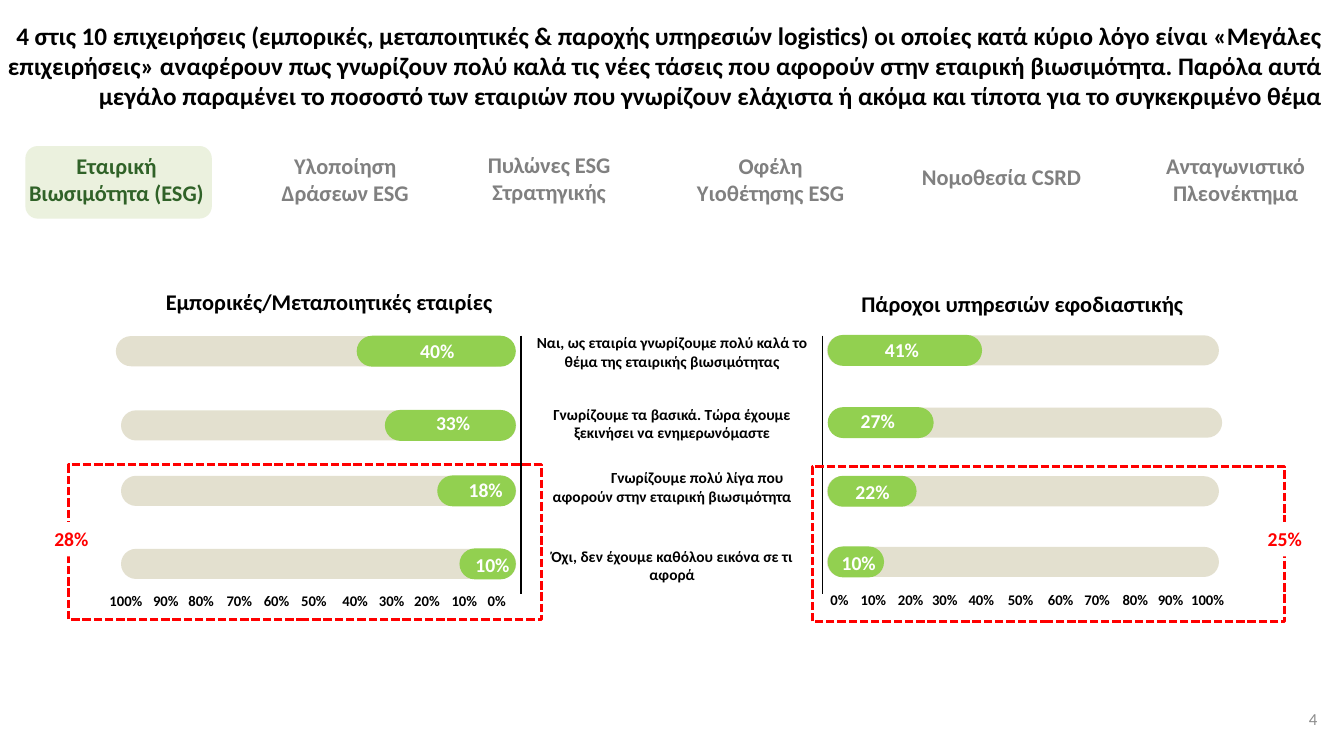
from lxml.etree import SubElement
from pptx import Presentation
from pptx.dml.color import RGBColor as RGB
from pptx.enum.dml import MSO_LINE as Dash
from pptx.enum.shapes import MSO_CONNECTOR as Link, MSO_SHAPE as Kind
from pptx.enum.text import MSO_ANCHOR as Anchor, PP_ALIGN as Align
from pptx.oxml.ns import qn
from pptx.util import Cm, Pt

BLACK = RGB(0, 0, 0)
WHITE = RGB(255, 255, 255)
RED = RGB(255, 0, 0)
GREY = RGB(0x80, 0x80, 0x80)
PALE = RGB(0x8C, 0x8C, 0x8C)
SAND = RGB(0xDD, 0xD9, 0xC3)
LIME = RGB(0x92, 0xD0, 0x50)
MINT = RGB(0xEB, 0xF1, 0xDE)
GREEN = RGB(0x30, 0x62, 0x28)

TITLE = (
    "4 στις 10 επιχειρήσεις (εμπορικές, μεταποιητικές & παροχής υπηρεσιών logistics) "
    "οι οποίες κατά κύριο λόγο είναι «Μεγάλες επιχειρήσεις» αναφέρουν πως γνωρίζουν "
    "πολύ καλά τις νέες τάσεις που αφορούν στην εταιρική βιωσιμότητα. Παρόλα αυτά "
    "μεγάλο παραμένει το ποσοστό των εταιριών που γνωρίζουν ελάχιστα ή ακόμα και "
    "τίποτα για το συγκεκριμένο θέμα"
)
TABS = [
    ("Εταιρική Βιωσιμότητα (ESG)", 0.33, 3.71, 5.21, GREEN),
    ("Υλοποίηση Δράσεων ESG", 6.35, 3.71, 4.7, GREY),
    ("Πυλώνες ESG Στρατηγικής", 10.92, 3.68, 5.84, GREY),
    ("Οφέλη Υιοθέτησης ESG", 17.07, 3.71, 4.7, GREY),
    ("Νομοθεσία CSRD", 22.89, 3.99, 4.7, GREY),
    ("Ανταγωνιστικό Πλεονέκτημα", 28.42, 3.71, 5.44, GREY),
]
HEADS = [
    ("Εμπορικές/Μεταποιητικές εταιρίες", 3.61, 7.14, 9.37),
    ("Πάροχοι υπηρεσιών εφοδιαστικής", 20.8, 7.19, 9.93),
]
REPLIES = [
    ("Ναι, ως εταιρία γνωρίζουμε πολύ καλά το θέμα της εταιρικής βιωσιμότητας", 8.31),
    ("Γνωρίζουμε τα βασικά. Τώρα έχουμε ξεκινήσει να ενημερωνόμαστε", 10.11),
    ("\tΓνωρίζουμε πολύ λίγα που αφορούν στην εταιρική βιωσιμότητα", 11.71),
    ("Όχι, δεν έχουμε καθόλου εικόνα σε τι αφορά", 13.69),
]
TRADE = [
    (40, 2.92, 8.85, 4.01, 10.34, 8.41),
    (33, 3.05, 10.72, 3.3, 10.74, 10.24),
    (18, 3.05, 12.37, 1.98, 11.56, 11.91),
    (10, 3.05, 14.21, 1.42, 11.73, 13.82),
]
LOGIS = [
    (41, 20.84, 8.83, 3.89, 22.05, 8.38),
    (27, 20.92, 10.65, 2.67, 21.44, 10.19),
    (22, 20.84, 12.38, 2.24, 21.31, 11.96),
    (10, 20.84, 14.16, 1.42, 20.96, 13.77),
]
TICKS = [
    (14.81, [12.04, 11.13, 10.19, 9.3, 8.38, 7.34, 6.4, 5.46, 4.5, 3.61, 2.51]),
    (14.79, [20.68, 21.44, 22.38, 23.24, 24.16, 25.15, 26.16, 27.08, 28.04, 28.93, 29.77]),
]
GROUPS = [("28%", 1.73, 11.71, 1.04), ("25%", 20.47, 11.76, 31.62)]


class Board:
    font = "Calibri"

    def __init__(self, deck):
        self.slide = deck.slides.add_slide(deck.slide_layouts[5])
        self.shapes = self.slide.shapes

    def label(self, shape, text, size, color, align, bold=True, space=None):
        frame = shape.text_frame
        frame.text = text
        frame.word_wrap = True
        for para in frame.paragraphs:
            para.alignment = align
            if space:
                para.line_spacing = space
            for run in para.runs:
                font = run.font
                font.name, font.size, font.bold = self.font, Pt(size), bold
                font.color.rgb = color
        return frame

    def title(self, text, x, y, w, h):
        shape = self.shapes.title
        shape.left, shape.top, shape.width, shape.height = Cm(x), Cm(y), Cm(w), Cm(h)
        frame = self.label(shape, text, 18, BLACK, Align.RIGHT)
        frame.vertical_anchor = Anchor.TOP

    def text(self, text, x, y, w, h, size, color=BLACK, align=Align.CENTER,
             anchor=Anchor.TOP, fill=None, **style):
        box = self.shapes.add_textbox(Cm(x), Cm(y), Cm(w), Cm(h))
        self.label(box, text, size, color, align, **style).vertical_anchor = anchor
        if fill is not None:
            box.fill.solid()
            box.fill.fore_color.rgb = fill

    def shape(self, kind, x, y, w, h):
        shape = self.shapes.add_shape(kind, Cm(x), Cm(y), Cm(w), Cm(h))
        shape.shadow.inherit = False
        return shape

    def pill(self, x, y, w, h, color, curve=0.5, alpha=None):
        pill = self.shape(Kind.ROUNDED_RECTANGLE, x, y, w, h)
        pill.adjustments[0] = curve
        pill.fill.solid()
        pill.fill.fore_color.rgb = color
        pill.line.fill.background()
        if alpha:
            tint = next(pill._element.iter(qn("a:srgbClr")))
            SubElement(tint, qn("a:alpha")).set("val", str(alpha * 1000))

    def frame(self, x, y, w, h):
        rect = self.shape(Kind.RECTANGLE, x, y, w, h)
        rect.fill.background()
        rect.line.color.rgb = RED
        rect.line.width = Pt(2)
        rect.line.dash_style = Dash.SQUARE_DOT

    def line(self, x, top, end):
        line = self.shapes.add_connector(Link.STRAIGHT, Cm(x), Cm(top), Cm(x), Cm(end))
        line.line.color.rgb = BLACK
        line.line.width = Pt(1)
        SubElement(line._element.spPr, qn("a:effectLst"))

    def bars(self, rows, wide, edge, mirror):
        for value, x, mid, fill, left, top in rows:
            self.pill(x, mid - 0.38, wide, 0.76, SAND, alpha=80)
            start = edge - fill if mirror else edge
            self.pill(start, mid - 0.39, fill, 0.78, LIME)
            self.text(f"{value}%", left, top, 1.42, 0.86, 14, WHITE, Align.LEFT)

    def axis(self, y, spots):
        for step, x in enumerate(spots):
            wide = 1.57 if step == 10 else 1.3
            self.text(f"{step * 10}%", x, y, wide, 0.71, 10.5, align=Align.LEFT, space=0.95)


def main():
    deck = Presentation()
    deck.slide_width, deck.slide_height = Cm(33.87), Cm(19.05)
    board = Board(deck)
    board.title(TITLE, -0.28, 0.38, 33.86, 2.57)
    board.pill(0.64, 3.68, 4.7, 1.83, MINT, curve=0.17)
    for text, x, y, w, color in TABS:
        board.text(text, x, y, w, 1.63, 16, color)
    for text, x, y, w in HEADS:
        board.text(text, x, y, w, 0.94, 16)
    for x in (13.13, 20.73):
        board.line(x, 8.46, 14.96)
    for text, y in REPLIES:
        board.text(text, 13.13, y, 7.62, 1.12, 11, anchor=Anchor.MIDDLE)
    board.bars(TRADE, 9.96, 13, True)
    board.bars(LOGIS, 9.88, 20.86, False)
    for y, spots in TICKS:
        board.axis(y, spots)
    for text, x, y, left in GROUPS:
        board.frame(x, y, 11.91, 3.91)
        board.text(text, left, 13.16, 1.52, 0.86, 14, RED, fill=WHITE)
    board.text("4", 27.53, 17.6, 5.92, 1.02, 12, PALE, Align.RIGHT, Anchor.MIDDLE, bold=False)
    deck.save("out.pptx")


if __name__ == "__main__":
    main()
